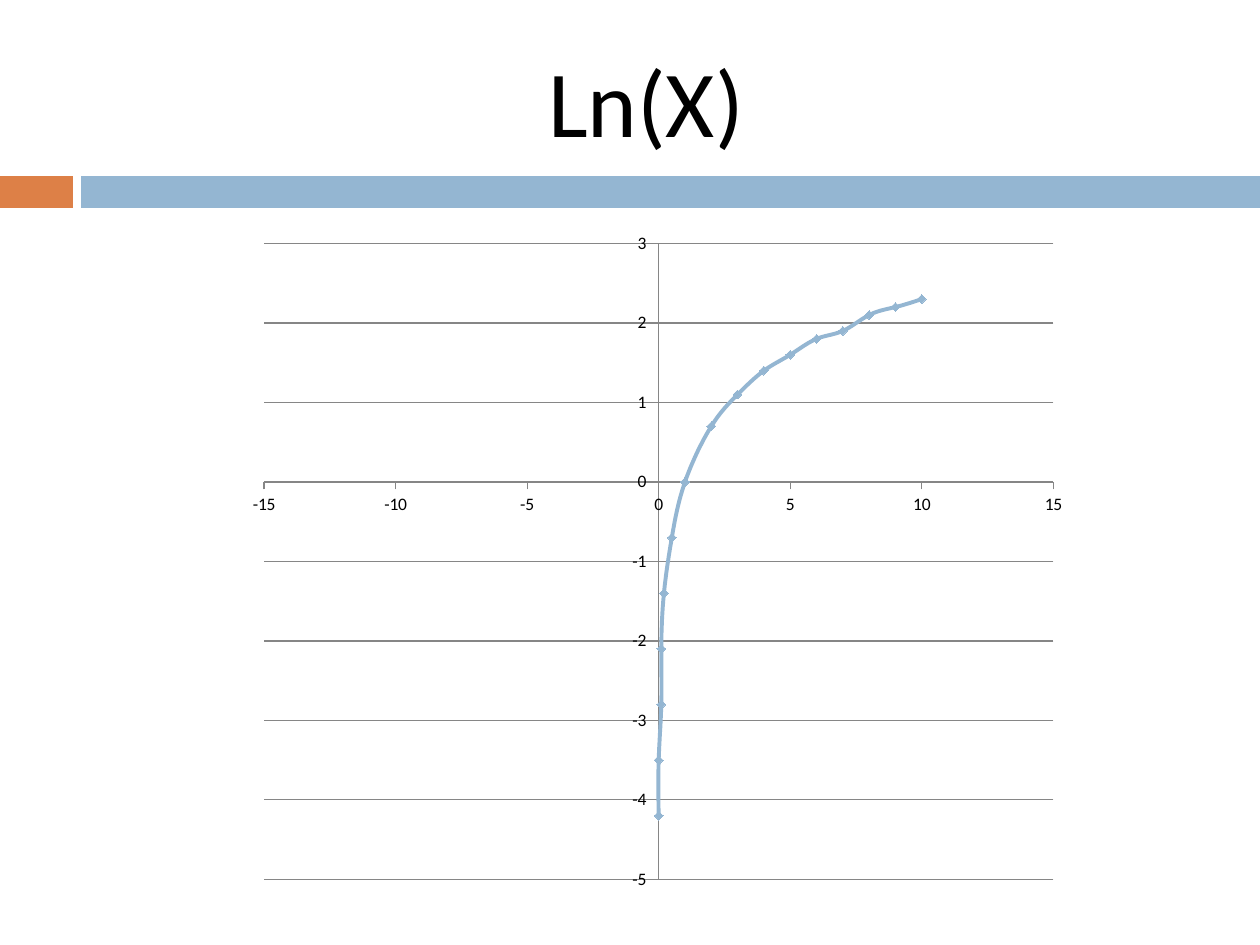
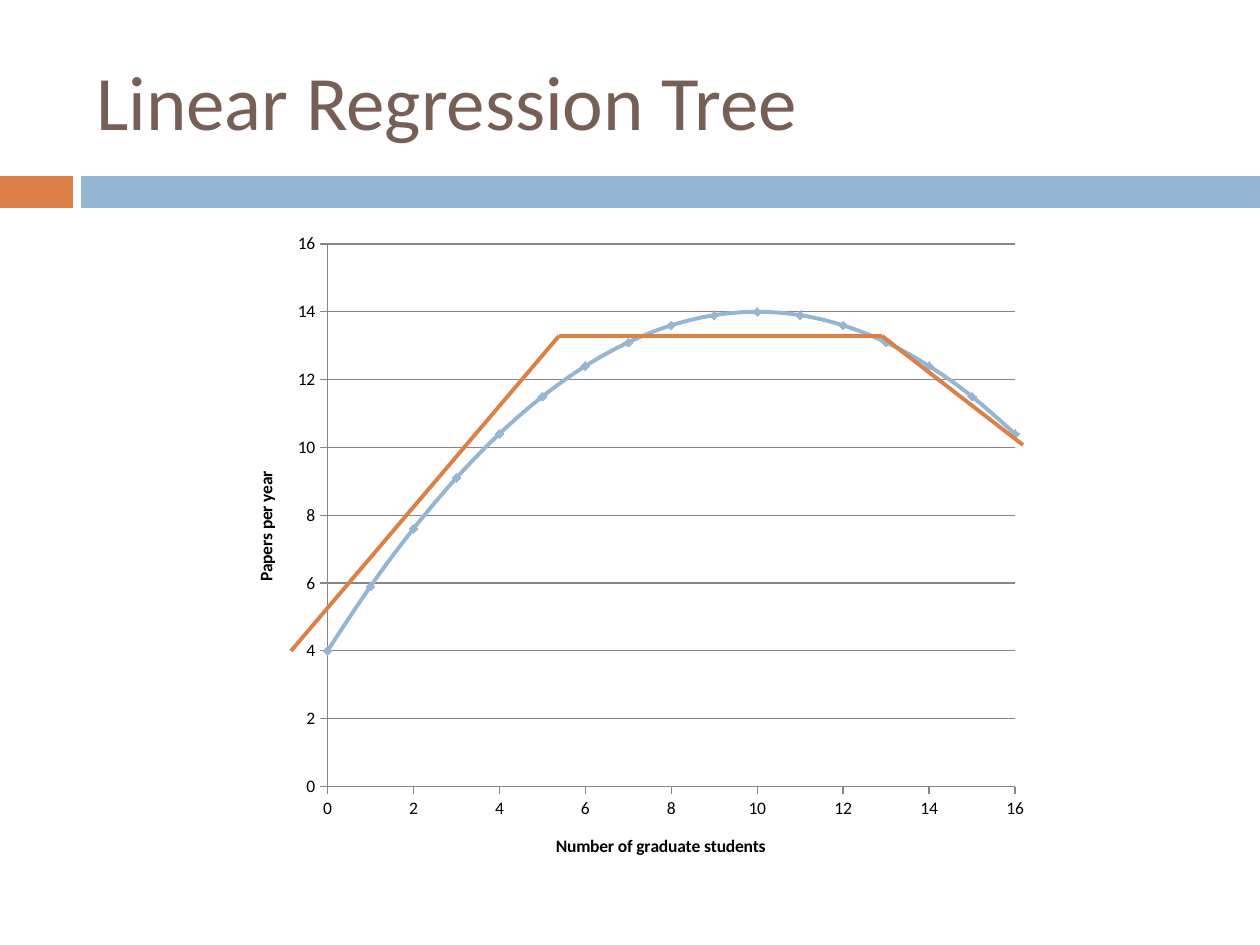
from lxml import etree
from pptx import Presentation, util as u
from pptx.chart.data import XyChartData
from pptx.dml.color import RGBColor
from pptx.enum import chart as c, shapes, text
from pptx.oxml.ns import qn

# Shared style
FONT = "Calibri"
BLACK, BROWN, BLUE, ORANGE, GREY = "000000", "775F55", "94B6D2", "DD8047", "868686"
BANDS = [((0, 176, 73, 32), ORANGE), ((81, 176, 1179, 32), BLUE)]
TITLE_BOX = (84, 32, 1124, 136)

# Content: axes are (title, maximum); the logarithm has no value for x up to zero
HALVINGS = [0.5, 0.2, 0.1, 0.1, 0, 0]
NO_LOGARITHM = [*range(-10, 0), *(-x for x in HALVINGS), 0]
SLIDES = [
    dict(
        title=("Ln(X)", 54, BLACK, text.PP_ALIGN.CENTER),
        box=(236, 220, 843, 683),
        x=[*NO_LOGARITHM, *reversed(HALVINGS), *range(1, 11)],
        y=[None] * len(NO_LOGARITHM)
        + [-4.2, -3.5, -2.8, -2.1, -1.4, -0.7, 0, 0.7,
           1.1, 1.4, 1.6, 1.8, 1.9, 2.1, 2.2, 2.3],
        x_axis=(None, None),
        y_axis=(None, None),
        tree_lines=[],
    ),
    dict(
        title=("Linear Regression Tree", 44, BROWN, text.PP_ALIGN.LEFT),
        box=(229, 221, 811, 662),
        x=list(range(17)),
        y=[4, 5.9, 7.6, 9.1, 10.4, 11.5, 12.4, 13.1, 13.6,
           13.9, 14, 13.9, 13.6, 13.1, 12.4, 11.5, 10.4],
        x_axis=("Number of graduate students", 16),
        y_axis=("Papers per year", None),
        tree_lines=[(291, 651, 559, 336), (882, 336, 559, 336), (1023, 445, 882, 336)],
    ),
]


def px(*lengths):
    return [u.Emu(round(length * 914400 / 126)) for length in lengths]


def color(value):
    return RGBColor.from_string(value)


def set_font(font, size, value, bold=False):
    font.name, font.size, font.bold = FONT, u.Pt(size), bold
    font.color.rgb = color(value)


def set_line(line, value, width):
    line.color.rgb, line.width = color(value), u.Pt(width)


def add_bands(slide):
    for box, fill in BANDS:
        band = slide.shapes.add_shape(shapes.MSO_SHAPE.RECTANGLE, *px(*box))
        band.shadow.inherit = False
        band.fill.solid()
        band.fill.fore_color.rgb = color(fill)
        band.line.fill.background()


def add_title(slide, words, size, value, alignment):
    frame = slide.shapes.add_textbox(*px(*TITLE_BOX)).text_frame
    frame.word_wrap = True
    frame.vertical_anchor = text.MSO_ANCHOR.MIDDLE
    paragraph = frame.paragraphs[0]
    paragraph.alignment = alignment
    run = paragraph.add_run()
    run.text = words
    set_font(run.font, size, value)


def style_axis(axis, title, maximum):
    axis.maximum_scale = maximum
    axis.major_tick_mark = c.XL_TICK_MARK.OUTSIDE
    axis.minor_tick_mark = c.XL_TICK_MARK.NONE
    set_line(axis.format.line, GREY, 0.75)
    set_font(axis.tick_labels.font, 10, BLACK)
    axis.has_title = title is not None
    if title:
        run = axis.axis_title.text_frame.paragraphs[0].add_run()
        run.text = title
        set_font(run.font, 10, BLACK, bold=True)


def smooth_and_clear_gaps(series):
    """Smooth the curve and drop the points that have no y value."""
    element = series._element
    for smooth in element.findall(qn("c:smooth")):
        smooth.set("val", "1")
    for point in list(element.find(qn("c:yVal")).iter(qn("c:pt"))):
        if point.findtext(qn("c:v")) in ("None", "", None):
            point.getparent().remove(point)


def add_curve(slide, box, xs, ys, x_axis, y_axis):
    data = XyChartData()
    points = data.add_series("Series 1")
    for x, y in zip(xs, ys):
        points.add_data_point(x, y)
    chart = slide.shapes.add_chart(c.XL_CHART_TYPE.XY_SCATTER_SMOOTH, *px(*box), data).chart
    chart.has_legend = chart.has_title = False
    set_font(chart.font, 10, BLACK)
    style_axis(chart.category_axis, *x_axis)
    style_axis(chart.value_axis, *y_axis)
    chart.category_axis.has_major_gridlines = False
    chart.value_axis.has_major_gridlines = True
    set_line(chart.value_axis.major_gridlines.format.line, GREY, 0.75)

    chart.plots[0].vary_by_categories = False
    series = chart.plots[0].series[0]
    smooth_and_clear_gaps(series)
    set_line(series.format.line, BLUE, 2.25)
    marker = series.marker
    marker.style, marker.size = c.XL_MARKER_STYLE.DIAMOND, 5
    marker.format.fill.solid()
    marker.format.fill.fore_color.rgb = color(BLUE)
    set_line(marker.format.line, BLUE, 0.75)


def add_tree_line(slide, ends):
    connector = slide.shapes.add_connector(shapes.MSO_CONNECTOR.STRAIGHT, *px(*ends))
    set_line(connector.line, ORANGE, 2.25)
    etree.SubElement(connector._element.spPr, qn("a:effectLst"))


def main():
    presentation = Presentation()
    presentation.slide_width, presentation.slide_height = px(1260, 945)
    for content in SLIDES:
        slide = presentation.slides.add_slide(presentation.slide_layouts[6])
        add_bands(slide)
        add_title(slide, *content["title"])
        add_curve(slide, *(content[key] for key in ("box", "x", "y", "x_axis", "y_axis")))
        for ends in content["tree_lines"]:
            add_tree_line(slide, ends)
    presentation.save("out.pptx")


if __name__ == "__main__":
    main()
